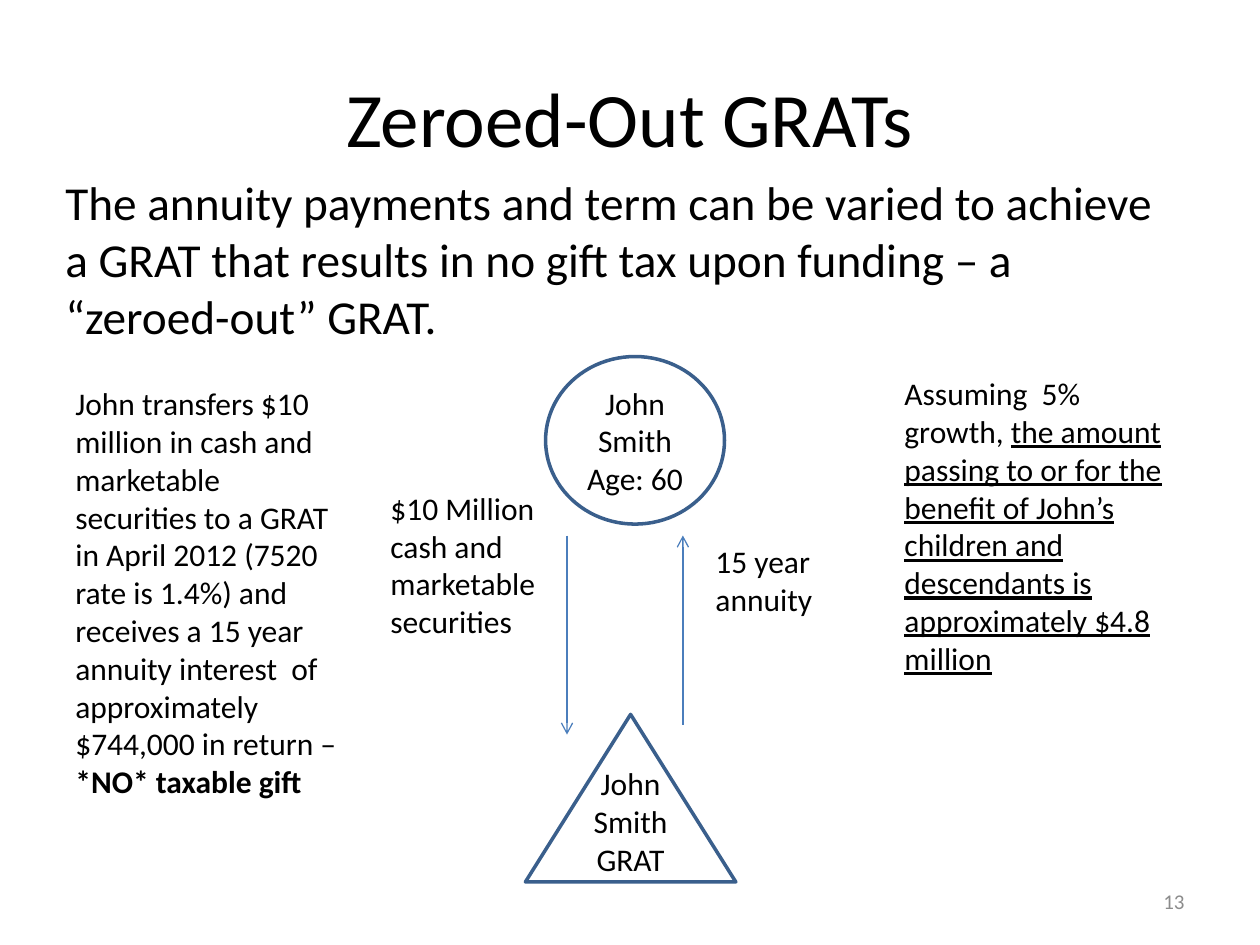
from lxml.etree import SubElement
from pptx import Presentation
from pptx.dml.color import RGBColor
from pptx.enum.shapes import MSO_CONNECTOR as Connector, MSO_SHAPE as Shape
from pptx.enum.text import MSO_ANCHOR as Anchor, PP_ALIGN as Align
from pptx.oxml.ns import qn
from pptx.util import Inches, Pt

COLORS = {"text": "000000", "number": "8C8C8C", "fill": "FFFFFF",
          "outline": "3A5F8C", "arrow": "4B7EBC"}


class SlideBuilder:
    """Draws styled text, shapes and arrows on the current slide."""

    font = "Calibri"
    body_size = 18

    def __init__(self, slide):
        self.slide = slide

    def color(self, name):
        return RGBColor.from_string(COLORS[name])

    def set_lines(self, shape, lines, size=body_size, align=Align.LEFT,
                  anchor=Anchor.TOP, color="text"):
        text_frame = shape.text_frame
        text_frame.text = "\n".join(lines)
        text_frame.word_wrap = True
        text_frame.vertical_anchor = anchor
        for paragraph in text_frame.paragraphs:
            paragraph.alignment = align
            for run in paragraph.runs:
                self.style_run(run, size, color)

    def style_run(self, run, size=body_size, color="text"):
        run.font.size = Pt(size)
        run.font.name = self.font
        run.font.color.rgb = self.color(color)

    def text(self, box, content, **style):
        shape = self.slide.shapes.add_textbox(*map(Inches, box))
        self.set_lines(shape, [content], **style)
        return shape

    def emphasis(self, shape, content, bold=None, underline=None):
        run = shape.text_frame.paragraphs[0].add_run()
        run.text = content
        self.style_run(run)
        run.font.bold = bold
        run.font.underline = underline

    def party(self, kind, box, lines):
        shape = self.slide.shapes.add_shape(kind, *map(Inches, box))
        shape.shadow.inherit = False
        shape.fill.solid()
        shape.fill.fore_color.rgb = self.color("fill")
        shape.line.color.rgb = self.color("outline")
        shape.line.width = Pt(2)
        self.set_lines(shape, lines, align=Align.CENTER, anchor=Anchor.MIDDLE)
        return shape

    def arrow(self, x, start, end):
        connector = self.slide.shapes.add_connector(
            Connector.STRAIGHT, Inches(x), Inches(start), Inches(x), Inches(end))
        connector.line.color.rgb = self.color("arrow")
        connector.line.width = Pt(0.75)
        properties = connector.element.spPr
        SubElement(properties.find(qn("a:ln")), qn("a:tailEnd"), type="arrow")
        SubElement(properties, qn("a:effectLst"))


def main():
    presentation = Presentation()
    presentation.slide_width, presentation.slide_height = Inches(10), Inches(7.5)
    builder = SlideBuilder(presentation.slides.add_slide(presentation.slide_layouts[6]))

    builder.text((0.5, 0.3, 9, 1.25), "Zeroed-Out GRATs", size=44,
                 align=Align.CENTER, anchor=Anchor.MIDDLE)
    builder.text((7.17, 6.95, 2.33, 0.4), "13", size=12, align=Align.RIGHT,
                 anchor=Anchor.MIDDLE, color="number")

    builder.party(Shape.OVAL, (4.33, 2.83, 1.42, 1.33), ["John Smith", "Age: 60"])
    trust = builder.party(Shape.ISOSCELES_TRIANGLE, (4.17, 5.67, 1.67, 1.33),
                          ["John Smith GRAT"])
    trust.text_frame.margin_bottom = Inches(0.35)

    builder.arrow(4.5, 4.25, 5.83)
    builder.arrow(5.42, 5.75, 4.25)

    transfer = builder.text(
        (0.5, 3, 2.33, 3.43),
        "John transfers $10 million in cash and marketable securities to a GRAT "
        "in April 2012 (7520 rate is 1.4%) and receives a 15 year annuity "
        "interest  of approximately $744,000 in return – ")
    builder.emphasis(transfer, "*NO* taxable gift", bold=True)
    builder.text((3, 3.83, 1.58, 1.31), "$10 Million cash and marketable securities")
    builder.text((5.58, 4.25, 1.42, 0.71), "15 year annuity")
    growth = builder.text((7.08, 2.92, 2.42, 2.52), "Assuming  5% growth, ")
    builder.emphasis(
        growth,
        "the amount passing to or for the benefit of John’s children and "
        "descendants is approximately $4.8 million", underline=True)
    builder.text(
        (0.42, 1.33, 9.08, 1.46),
        "The annuity payments and term can be varied to achieve a GRAT that "
        "results in no gift tax upon funding – a “zeroed-out” GRAT.", size=27)

    presentation.save("out.pptx")


if __name__ == "__main__":
    main()
